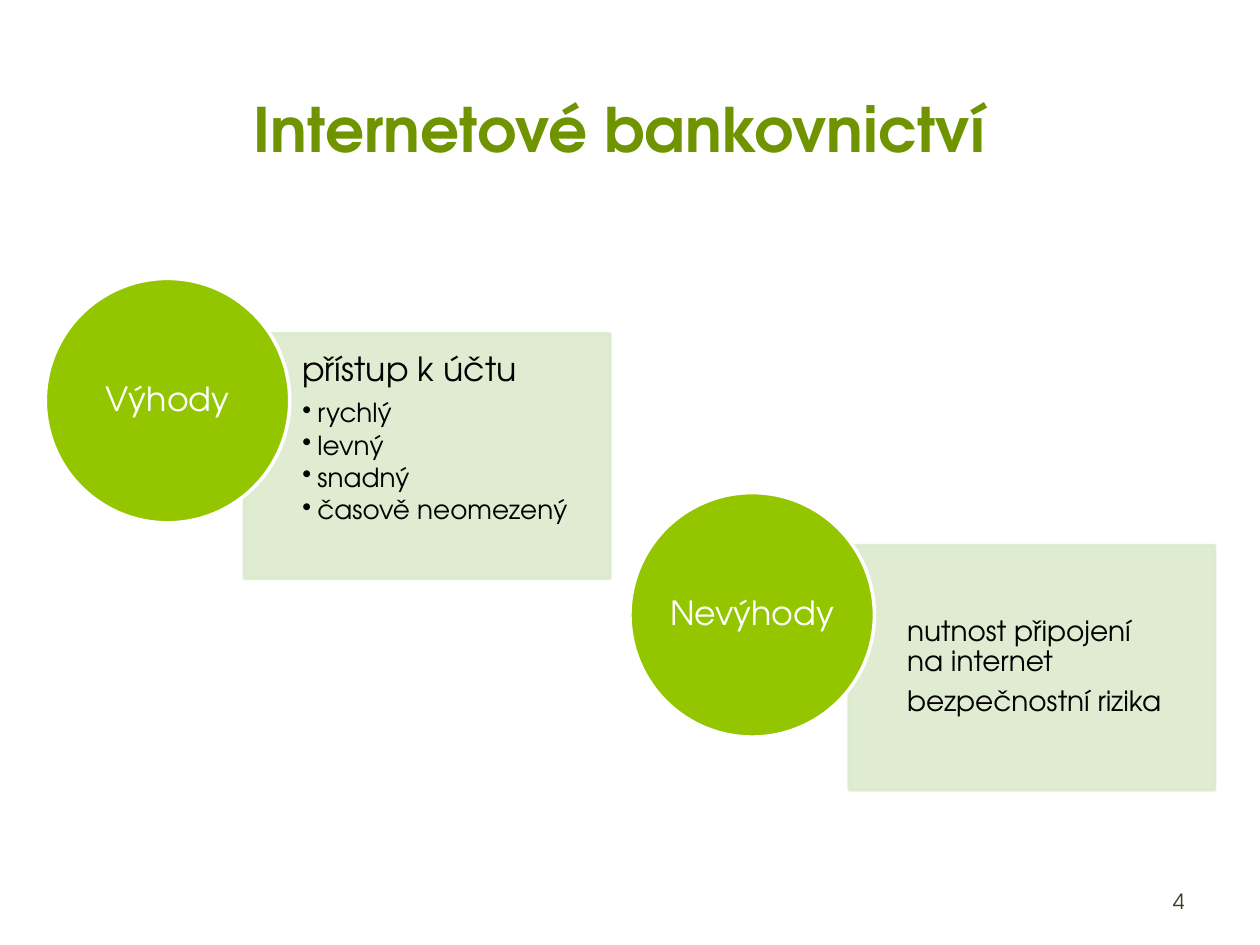
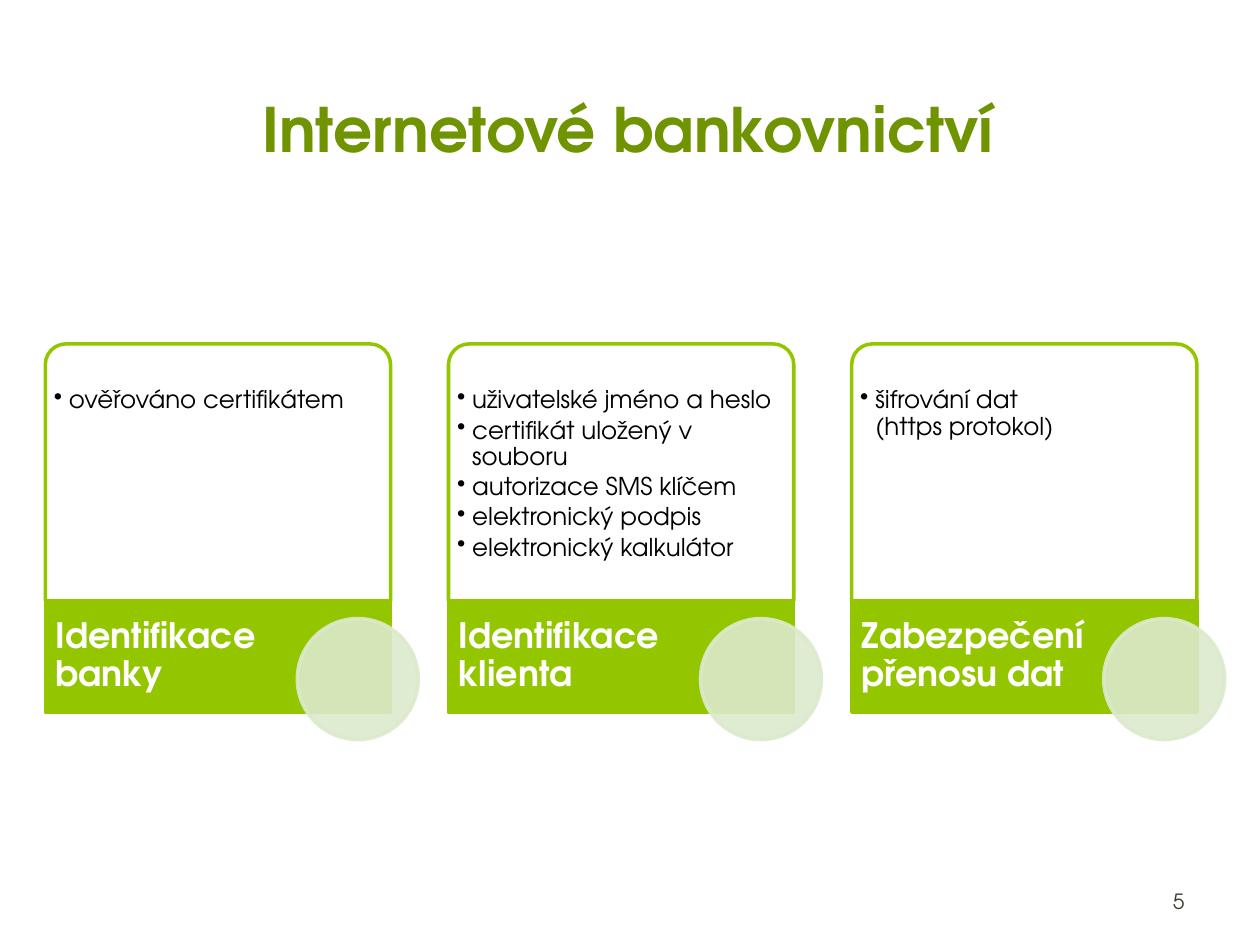
from collections import namedtuple
from lxml.etree import SubElement
from pptx import Presentation
from pptx.dml.color import RGBColor
from pptx.enum.shapes import MSO_SHAPE
from pptx.enum.text import MSO_ANCHOR, PP_ALIGN
from pptx.oxml.ns import qn
from pptx.util import Inches, Pt

COLUMNS, ROWS = 100, 75
CELL = Inches(0.1)
FONT = "TeX Gyre Adventor"
COLORS = {"title": "6F9400", "accent": "94C600", "tint": "DCEACC",
          "white": "FFFFFF", "text": "000000", "number": "3E3D2D"}
HEADING = "Internetové bankovnictví"
NO_INSETS = (0, 0, 0, 0)
TEXT_INSETS = (0.1, 0.05, 0.1, 0.05)

Style = namedtuple("Style", "size color bold align bullet leading after",
                   defaults=(False, PP_ALIGN.LEFT, False, 0.9, 0.35))
TITLE = Style(35, "title", True, PP_ALIGN.CENTER, leading=1, after=0)
NUMBER = Style(12, "number", align=PP_ALIGN.RIGHT, leading=1, after=0)
CIRCLE = Style(19, "white", align=PP_ALIGN.CENTER)
LEAD = Style(19, "text")
DRAWBACK = Style(16, "text")
BENEFIT = Style(15, "text", bullet=True, after=0.15)
METHOD = Style(14, "text", bullet=True, after=0.15)
LABEL = Style(20, "white", True)


class Box(namedtuple("Box", "left top width height")):
    """Area of the slide measured in grid columns and rows."""

    def area(self, column, row, width, height):
        """Return an area placed relative to this one."""
        return Box(self.left + column, self.top + row, width, height)

    def lengths(self):
        """Return the area in slide units."""
        return [round(value * CELL) for value in self]


def rgb(name):
    """Look up a palette colour."""
    return RGBColor.from_string(COLORS[name])


def write(holder, paragraphs, anchor=MSO_ANCHOR.MIDDLE, insets=NO_INSETS):
    """Fill a holder with (text, style) paragraphs."""
    frame = holder.text_frame
    frame.word_wrap = True
    frame.vertical_anchor = anchor
    (frame.margin_left, frame.margin_top,
     frame.margin_right, frame.margin_bottom) = map(Inches, insets)
    for index, (text, style) in enumerate(paragraphs):
        paragraph = frame.add_paragraph() if index else frame.paragraphs[0]
        paragraph.alignment = style.align
        paragraph.line_spacing = style.leading
        paragraph.space_after = Pt(style.size * style.after)
        if style.bullet:
            properties = paragraph._p.get_or_add_pPr()
            properties.set("marL", str(Inches(0.12)))
            properties.set("indent", str(-Inches(0.12)))
            SubElement(properties, qn("a:buChar"), char="•")
        for number, line in enumerate(text.split("\n")):
            if number:
                paragraph.add_line_break()
            run = paragraph.add_run()
            run.text = line
            run.font.name = FONT
            run.font.size = Pt(style.size)
            run.font.bold = style.bold
            run.font.color.rgb = rgb(style.color)


def draw(slide, kind, box, fill, line, opacity=100):
    """Draw a filled and outlined preset shape."""
    shape = slide.shapes.add_shape(kind, *box.lengths())
    shape.shadow.inherit = False
    shape.fill.solid()
    shape.fill.fore_color.rgb = rgb(fill)
    shape.line.color.rgb = rgb(line)
    shape.line.width = Pt(2)
    if opacity < 100:
        for color in shape._element.spPr.iter(qn("a:srgbClr")):
            SubElement(color, qn("a:alpha"), val=str(opacity * 1000))
    return shape


def add_page(deck, heading, number):
    """Add a slide with the shared title and page number."""
    slide = deck.slides.add_slide(deck.slide_layouts[6])
    page = Box(0, 0, COLUMNS, ROWS)
    for box, text, style in ((page.area(4.7, 4.5, 90.3, 11.4), heading, TITLE),
                             (page.area(71.7, 69.5, 23.3, 4), str(number), NUMBER)):
        write(slide.shapes.add_textbox(*box.lengths()), [(text, style)],
              insets=TEXT_INSETS)
    return slide


def add_argument(slide, box, name, points, anchor, padding):
    """Put a named circle top left and its card bottom right in the box."""
    diameter, card_width = 19.4, 29
    card = draw(slide, MSO_SHAPE.RECTANGLE,
                box.area(box.width - card_width, box.height - diameter,
                         card_width, diameter), "tint", "tint", 90)
    write(card, points, anchor, (0.46, padding, padding, padding))
    circle = draw(slide, MSO_SHAPE.OVAL, box.area(0, 0, diameter, diameter),
                  "accent", "white")
    write(circle, [(name, CIRCLE)])


def add_security_card(slide, box, label, methods):
    """Stack a method list on a label band with a round accent."""
    list_height, band_height, diameter = 20.4, 8.8, 9.6
    panel = draw(slide, MSO_SHAPE.ROUND_2_SAME_RECTANGLE,
                 box.area(0, 0, box.width, list_height), "white", "accent")
    panel.adjustments[0], panel.adjustments[1] = 0.08, 0
    write(panel, [(method, METHOD) for method in methods],
          MSO_ANCHOR.TOP, (0.02, 0.3, 0.02, 0.02))
    band = draw(slide, MSO_SHAPE.RECTANGLE,
                box.area(0, list_height, box.width, band_height), "accent", "accent")
    write(band, [(label, LABEL)], insets=(0.08, 0, 0.84, 0))
    draw(slide, MSO_SHAPE.OVAL,
         box.area(box.width - 7.4, list_height + 1.4, diameter, diameter),
         "tint", "tint", 90)


def add_pros_and_cons(deck):
    """Build the slide of advantages and drawbacks."""
    slide = add_page(deck, HEADING + " ", 4)
    benefits = ("rychlý", "levný", "snadný", "časově neomezený")
    add_argument(slide, Box(3.6, 22.1, 44.8, 23.8), "Výhody",
                 [("přístup k účtu", LEAD)] + [(text, BENEFIT) for text in benefits],
                 MSO_ANCHOR.TOP, 0.15)
    drawbacks = ("nutnost připojení \nna internet", "bezpečnostní rizika")
    add_argument(slide, Box(50, 39.1, 46.4, 23.6), "Nevýhody",
                 [(text, DRAWBACK) for text in drawbacks], MSO_ANCHOR.MIDDLE, 0.12)


def add_security(deck):
    """Build the slide of identification and transfer security."""
    slide = add_page(deck, HEADING, 5)
    cards = (
        ("Identifikace banky", ["ověřováno certifikátem"]),
        ("Identifikace klienta", ["uživatelské jméno a heslo",
                                  "certifikát uložený v souboru",
                                  "autorizace SMS klíčem",
                                  "elektronický podpis",
                                  "elektronický kalkulátor"]),
        ("Zabezpečení přenosu dat", ["šifrování dat \n(https protokol)"]),
    )
    for index, (label, methods) in enumerate(cards):
        add_security_card(slide, Box(3.6 + 32 * index, 27.3, 27.4, 29.2),
                          label, methods)


def main():
    """Build and save the presentation."""
    deck = Presentation()
    deck.slide_width, deck.slide_height = COLUMNS * CELL, ROWS * CELL
    add_pros_and_cons(deck)
    add_security(deck)
    deck.save("out.pptx")


if __name__ == "__main__":
    main()
